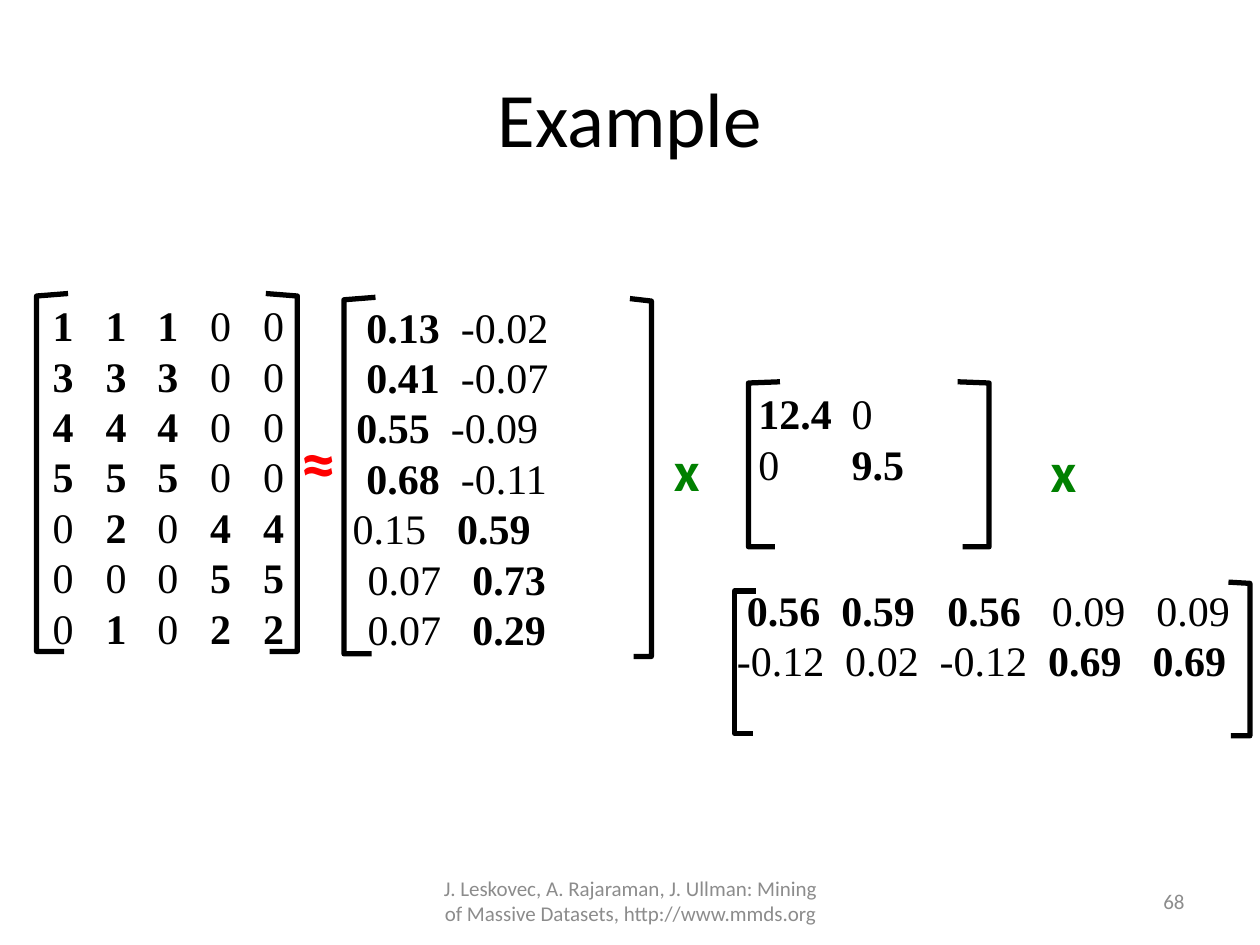
import dataclasses

import lxml.etree
import pptx
import pptx.dml.color
import pptx.enum.text
import pptx.oxml.ns
import pptx.util

Inches = pptx.util.Inches
Align = pptx.enum.text.PP_ALIGN
Anchor = pptx.enum.text.MSO_ANCHOR


@dataclasses.dataclass(frozen=True)
class Theme:
    heading_font: str = "Calibri"
    matrix_font: str = "Times New Roman"
    black: str = "000000"
    gray: str = "8C8C8C"
    red: str = "FF0000"
    green: str = "008000"
    title_size: int = 44
    approx_size: int = 40
    times_size: int = 32
    matrix_size: int = 24
    footer_size: int = 12
    bracket_width: int = 3


class SlideBuilder:
    def __init__(self, slide, theme):
        self.slide = slide
        self.theme = theme

    def frame(self, box, **format_values):
        shape = self.slide.shapes.add_textbox(*map(Inches, box))
        values = {"word_wrap": True, "vertical_anchor": Anchor.MIDDLE, **format_values}
        for name, value in values.items():
            setattr(shape.text_frame, name, value)
        return shape.text_frame

    def run(self, paragraph, text, font, size, color, bold=False):
        run = paragraph.add_run()
        run.text = text
        values = {"name": font, "size": pptx.util.Pt(size), "bold": bold}
        for name, value in values.items():
            setattr(run.font, name, value)
        run.font.color.rgb = pptx.dml.color.RGBColor.from_string(color)

    def label(self, box, text, size, color, align=Align.CENTER, bold=False, wrap=True):
        paragraph = self.frame(box, word_wrap=wrap).paragraphs[0]
        paragraph.alignment = align
        self.run(paragraph, text, self.theme.heading_font, size, color, bold)

    def tab_stops(self, paragraph, stops):
        properties = paragraph._p.get_or_add_pPr()
        tab_list = lxml.etree.SubElement(properties, pptx.oxml.ns.qn("a:tabLst"))
        for stop in stops:
            tab = lxml.etree.SubElement(tab_list, pptx.oxml.ns.qn("a:tab"))
            tab.set("pos", str(Inches(stop)))
            tab.set("algn", "l")

    def matrix(self, box, rows):
        frame = self.frame(box, vertical_anchor=Anchor.TOP)
        for index, (cells, stops) in enumerate(rows):
            paragraph = frame.add_paragraph() if index else frame.paragraphs[0]
            paragraph.alignment = Align.LEFT
            self.tab_stops(paragraph, [stop for stop in stops if stop > 0])
            for cell, stop in zip(cells.split(), stops):
                text = cell.lstrip("*")
                self.run(
                    paragraph,
                    "\t" + text if stop > 0 else text,
                    self.theme.matrix_font,
                    self.theme.matrix_size,
                    self.theme.black,
                    bold=cell.startswith("*"),
                )

    def bracket(self, tip, spine, foot, top, shoulder, bottom):
        points = [(tip, top), (spine, shoulder), (spine, bottom), (foot, bottom)]
        start, *others = [tuple(map(Inches, point)) for point in points]
        builder = self.slide.shapes.build_freeform(*start)
        builder.add_line_segments(others, close=False)
        shape = builder.convert_to_shape()
        shape.shadow.inherit = False
        shape.fill.background()
        shape.line.color.rgb = pptx.dml.color.RGBColor.from_string(self.theme.black)
        shape.line.width = pptx.util.Pt(self.theme.bracket_width)


BRACKETS = [
    (0.54, 0.29, 0.51, 2.33, 2.35, 5.17),
    (2.11, 2.36, 2.14, 2.33, 2.35, 5.17),
    (2.98, 2.73, 2.95, 2.36, 2.38, 5.19),
    (5.00, 5.17, 5.03, 2.37, 2.39, 5.21),
    (6.19, 5.94, 6.15, 3.03, 3.04, 4.34),
    (7.60, 7.85, 7.64, 3.03, 3.04, 4.34),
    (6.00, 5.83, 5.98, 4.69, 4.69, 5.82),
    (9.75, 9.92, 9.77, 4.62, 4.63, 5.84),
]

RATING_STOPS = [round(0.07 + 0.417 * column, 2) for column in range(5)]
RATINGS = [
    "*1 *1 *1 0 0",
    "*3 *3 *3 0 0",
    "*4 *4 *4 0 0",
    "*5 *5 *5 0 0",
    "0 *2 0 *4 *4",
    "0 0 0 *5 *5",
    "0 *1 0 *2 *2",
]

USER_STOPS = (0.21, 0.96)
LOWER_USER_STOPS = (0.22, 1.05)
USER_FACTORS = [
    ("*0.13 -0.02", USER_STOPS),
    ("*0.41 -0.07", USER_STOPS),
    ("*0.55 -0.09", (0.13, 0.88)),
    ("*0.68 -0.11", USER_STOPS),
    ("0.15 *0.59", (0.10, 0.93)),
    ("0.07 *0.73", LOWER_USER_STOPS),
    ("0.07 *0.29", LOWER_USER_STOPS),
]

STRENGTH_STOPS = (0, 0.74)
STRENGTHS = ["*12.4 0", "0 *9.5"]

ITEM_FACTORS = [
    ("*0.56 *0.59 *0.56 0.09 0.09", (0.08, 0.83, 1.67, 2.50, 3.33)),
    ("-0.12 0.02 -0.12 *0.69 *0.69", (0, 0.86, 1.61, 2.47, 3.30)),
]


def main():
    presentation = pptx.Presentation()
    presentation.slide_width = Inches(10)
    presentation.slide_height = Inches(7.5)
    slide = presentation.slides.add_slide(presentation.slide_layouts[6])
    theme = Theme()
    builder = SlideBuilder(slide, theme)

    builder.label((0.5, 0.3, 9, 1.25), "Example", theme.title_size, theme.black)
    builder.label(
        (3.42, 6.95, 3.17, 0.4),
        "J. Leskovec, A. Rajaraman, J. Ullman: Mining of Massive Datasets, http://www.mmds.org",
        theme.footer_size,
        theme.gray,
    )
    builder.label((7.17, 6.95, 2.33, 0.4), "68", theme.footer_size, theme.gray, Align.RIGHT)

    for bracket in BRACKETS:
        builder.bracket(*bracket)

    operators = [
        ((2.29, 3.27, 0.51, 0.77), "≈", theme.approx_size, theme.red),
        ((5.25, 3.4, 0.44, 0.64), "x", theme.times_size, theme.green),
        ((8.24, 3.41, 0.44, 0.64), "x", theme.times_size, theme.green),
    ]
    for operator in operators:
        builder.label(*operator, align=Align.LEFT, bold=True, wrap=False)

    builder.matrix((0.25, 2.33, 2.17, 2.93), [(row, RATING_STOPS) for row in RATINGS])
    builder.matrix((5.92, 3.03, 2.17, 0.91), [(row, STRENGTH_STOPS) for row in STRENGTHS])
    builder.matrix((2.6, 2.34, 2.07, 2.93), USER_FACTORS)
    builder.matrix((5.75, 4.59, 4.25, 1.31), ITEM_FACTORS)

    presentation.save("out.pptx")


if __name__ == "__main__":
    main()
